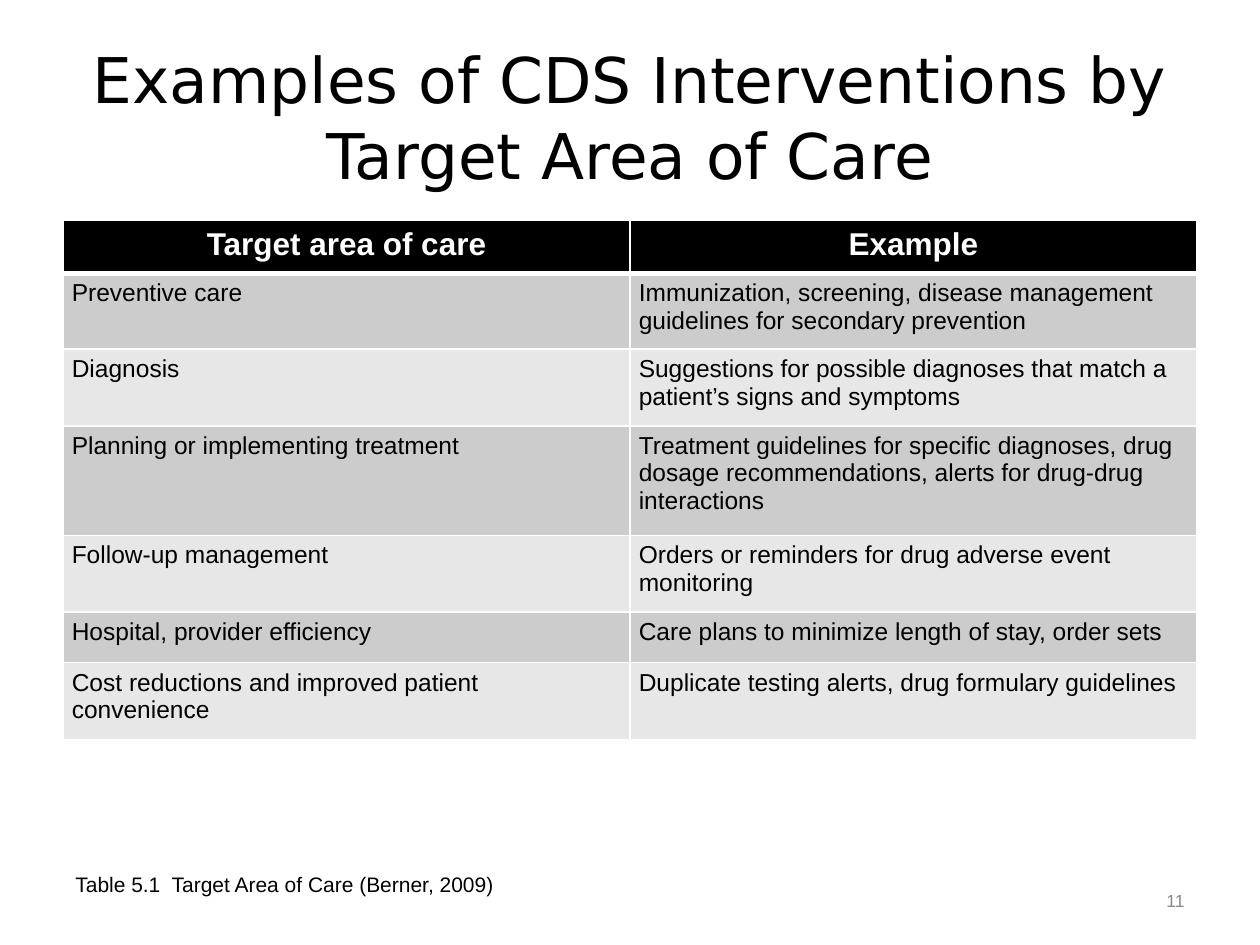
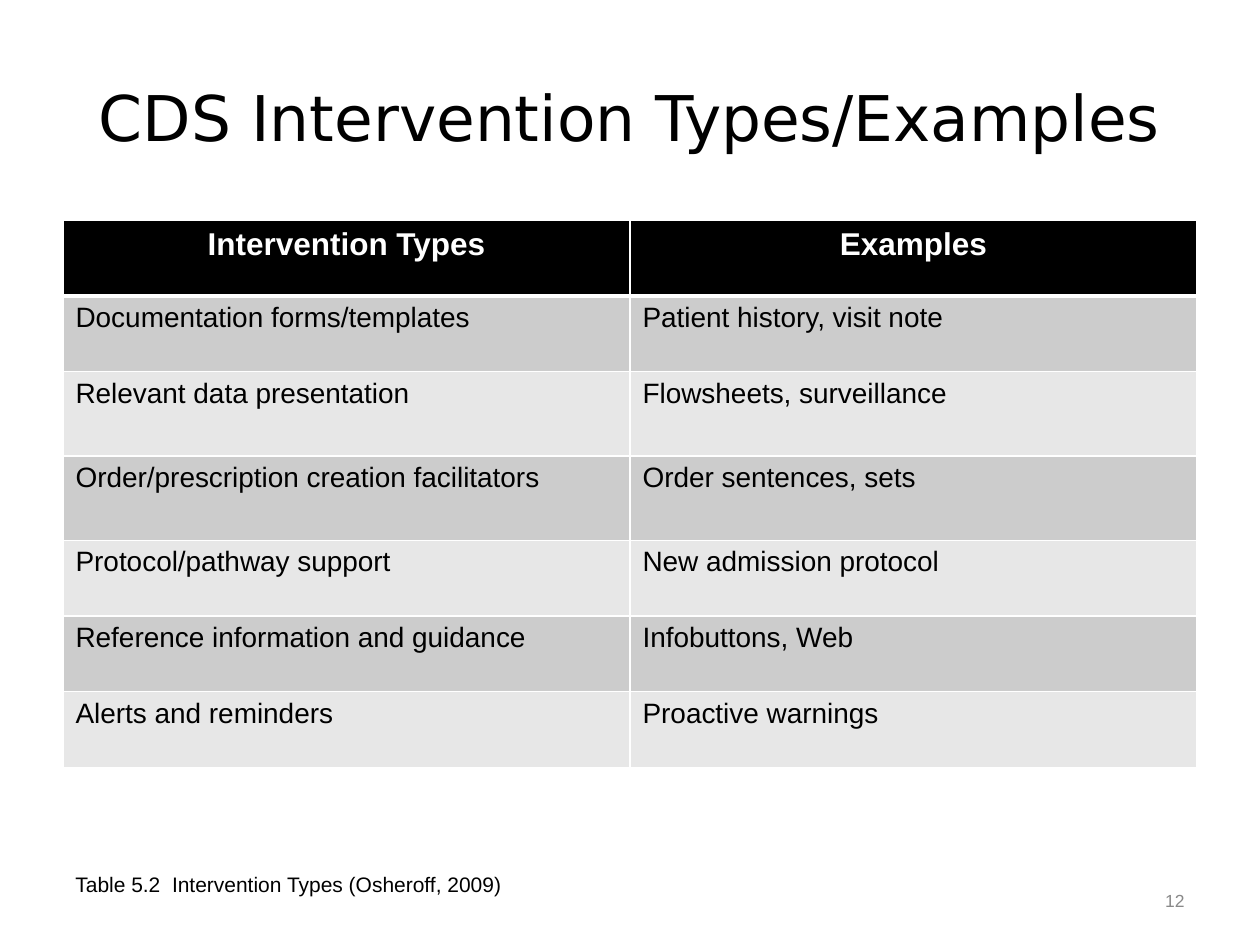
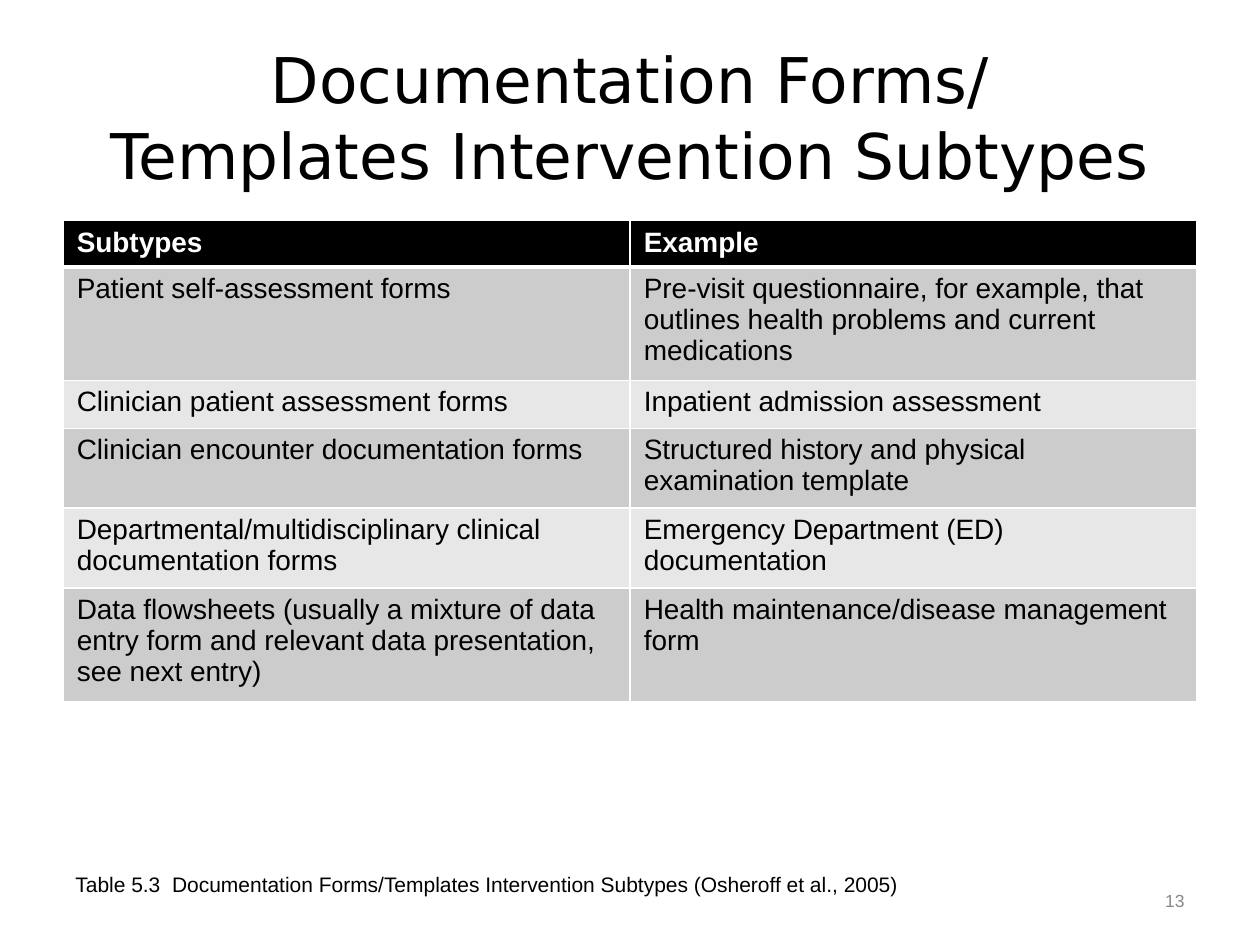
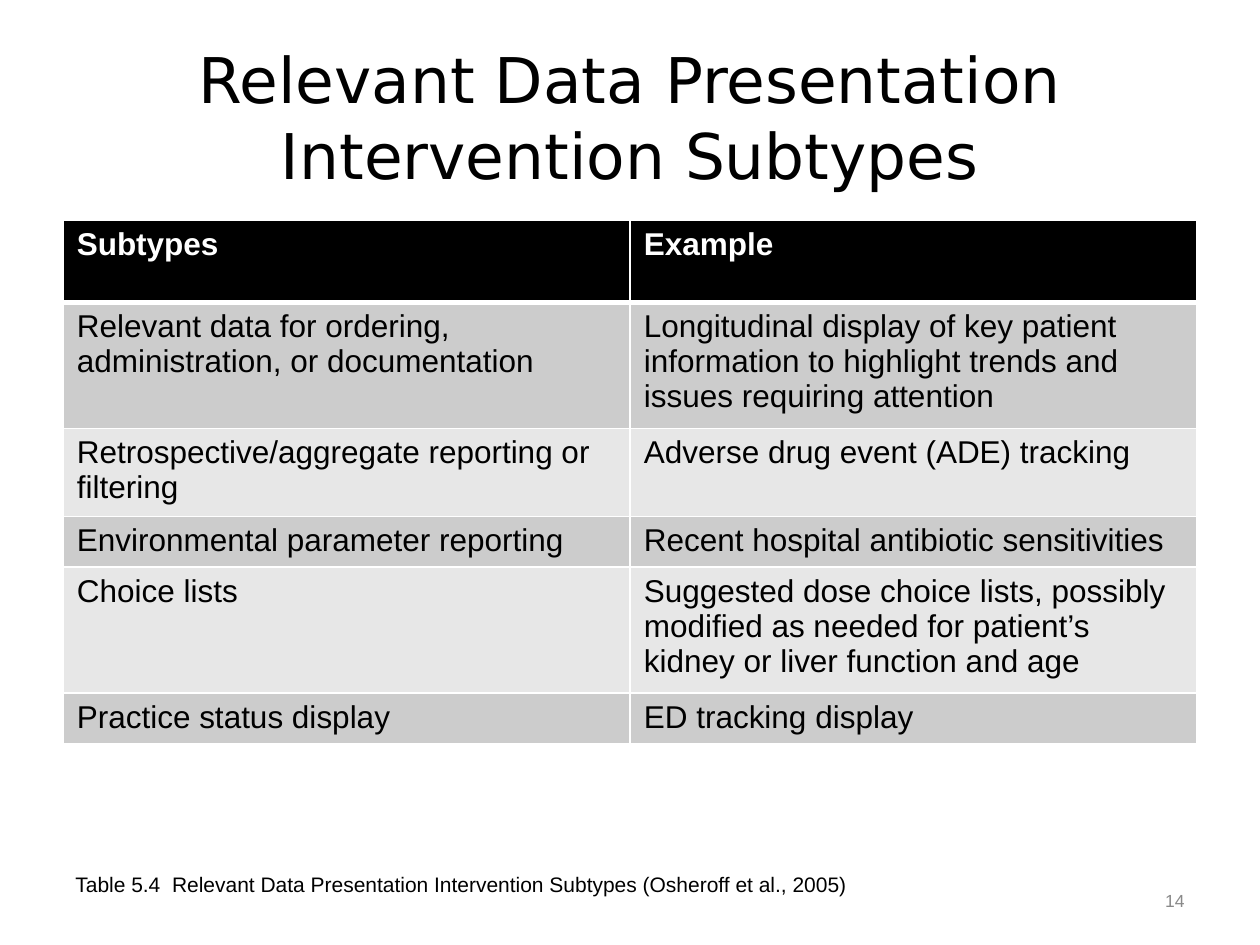
"""Build four slides of tables on clinical decision support interventions."""
from dataclasses import dataclass

from lxml.etree import SubElement
from pptx import Presentation
from pptx.dml.color import RGBColor
from pptx.enum.text import MSO_ANCHOR, PP_ALIGN
from pptx.oxml.ns import qn
from pptx.slide import Slide
from pptx.table import _Cell
from pptx.text.text import TextFrame
from pptx.util import Inches, Pt

BLACK = RGBColor(0x00, 0x00, 0x00)
WHITE = RGBColor(0xFF, 0xFF, 0xFF)
GRAY = RGBColor(0x89, 0x89, 0x89)
BANDS = (RGBColor(0xCC, 0xCC, 0xCC), RGBColor(0xE7, 0xE7, 0xE7))
HEAD_FONT = "DejaVu Sans"
BODY_FONT = "Arial"
LEFT, WIDTH = 0.5, 9
TABLE_TOP = 1.75
THIN, THICK = 1, 3
FIRST = 11


@dataclass(frozen=True)
class Style:
    """Hold the look of a piece of text."""
    size: int
    color: RGBColor = BLACK
    font: str = BODY_FONT
    bold: bool = False
    align: PP_ALIGN = PP_ALIGN.LEFT
    anchor: MSO_ANCHOR = MSO_ANCHOR.TOP


@dataclass(frozen=True)
class Box:
    """Hold a place on the slide in inches."""
    left: float
    top: float
    width: float
    height: float


@dataclass(frozen=True)
class Page:
    """Hold the content of one slide."""
    title: str
    note: str
    heights: tuple[float, ...]
    rows: tuple[tuple[str, str], ...]
    head: Style
    size: int
    inset: float
    head_inset: float


TITLE_BOX = Box(LEFT, 0.3, WIDTH, 1.25)
NOTE_BOX = Box(LEFT, 6.87, 8.35, 0.58)
NUM_BOX = Box(8.94, 6.85, 0.56, 0.6)
TITLE = Style(36, font=HEAD_FONT, align=PP_ALIGN.CENTER, anchor=MSO_ANCHOR.MIDDLE)
NOTE = Style(12)
NUM = Style(10, GRAY, align=PP_ALIGN.RIGHT, anchor=MSO_ANCHOR.MIDDLE)
HEAD_MID = Style(18, WHITE, bold=True, align=PP_ALIGN.CENTER)
HEAD_LEFT = Style(18, WHITE, bold=True)
HEAD_SMALL = Style(16, WHITE, bold=True)

PAGES = (
    Page(
        "Examples of CDS Interventions by Target Area of Care",
        "Table 5.1  Target Area of Care (Berner, 2009)",
        (0.42, 0.6, 0.61, 0.87, 0.61, 0.4, 0.61),
        (
            ("Target area of care", "Example"),
            ("Preventive care",
             "Immunization, screening, disease management guidelines for secondary prevention"),
            ("Diagnosis",
             "Suggestions for possible diagnoses that match a patient’s signs and symptoms"),
            ("Planning or implementing treatment",
             "Treatment guidelines for specific diagnoses, drug dosage recommendations, "
             "alerts for drug-drug interactions"),
            ("Follow-up management", "Orders or reminders for drug adverse event monitoring"),
            ("Hospital, provider efficiency", "Care plans to minimize length of stay, order sets"),
            ("Cost reductions and improved patient convenience",
             "Duplicate testing alerts, drug formulary guidelines"),
        ),
        HEAD_MID, 14, 0.07, 0.1,
    ),
    Page(
        "CDS Intervention Types/Examples",
        "Table 5.2  Intervention Types (Osheroff, 2009)",
        (0.6, 0.6, 0.67, 0.67, 0.6, 0.6, 0.6),
        (
            ("Intervention Types", "Examples"),
            ("Documentation forms/templates", "Patient history, visit note"),
            ("Relevant data presentation", "Flowsheets, surveillance"),
            ("Order/prescription creation facilitators", "Order sentences, sets"),
            ("Protocol/pathway support", "New admission protocol"),
            ("Reference information and guidance", "Infobuttons, Web"),
            ("Alerts and reminders", "Proactive warnings"),
        ),
        HEAD_MID, 16, 0.1, 0.1,
    ),
    Page(
        "Documentation Forms/\nTemplates Intervention Subtypes",
        "Table 5.3  Documentation Forms/Templates Intervention Subtypes (Osheroff et al., 2005)",
        (0.37, 0.9, 0.38, 0.63, 0.63, 0.9),
        (
            ("Subtypes", "Example"),
            ("Patient self-assessment forms",
             "Pre-visit questionnaire, for example, that outlines health problems "
             "and current medications"),
            ("Clinician patient assessment forms", "Inpatient admission assessment"),
            ("Clinician encounter documentation forms",
             "Structured history and physical examination template"),
            ("Departmental/multidisciplinary clinical documentation forms",
             "Emergency Department (ED) documentation"),
            ("Data flowsheets (usually a mixture of data entry form and relevant data "
             "presentation, see next entry)",
             "Health maintenance/disease management form"),
        ),
        HEAD_SMALL, 16, 0.11, 0.11,
    ),
    Page(
        "Relevant Data Presentation Intervention Subtypes",
        "Table 5.4  Relevant Data Presentation Intervention Subtypes (Osheroff et al., 2005)",
        (0.65, 1, 0.7, 0.4, 1, 0.4),
        (
            ("Subtypes", "Example"),
            ("Relevant data for ordering, administration, or documentation",
             "Longitudinal display of key patient information to highlight trends and "
             "issues requiring attention"),
            ("Retrospective/aggregate reporting or filtering", "Adverse drug event (ADE) tracking"),
            ("Environmental parameter reporting", "Recent hospital antibiotic sensitivities"),
            ("Choice lists",
             "Suggested dose choice lists, possibly modified as needed for patient’s "
             "kidney or liver function and age"),
            ("Practice status display", "ED tracking display"),
        ),
        HEAD_LEFT, 18, 0.11, 0.11,
    ),
)


def write(frame: TextFrame, text: str, style: Style) -> None:
    """Write text into a frame, with a line break at each newline."""
    frame.word_wrap = True
    para = frame.paragraphs[0]
    para.alignment = style.align
    for index, line in enumerate(text.split("\n")):
        if index:
            para.add_line_break()
        run = para.add_run()
        run.text = line
        font = run.font
        font.name, font.size, font.bold = style.font, Pt(style.size), style.bold
        font.color.rgb = style.color


def add_text(slide: Slide, box: Box, text: str, style: Style) -> None:
    """Add a text box in one style."""
    frame = slide.shapes.add_textbox(
        Inches(box.left), Inches(box.top), Inches(box.width), Inches(box.height)
    ).text_frame
    frame.vertical_anchor = style.anchor
    write(frame, text, style)


def add_edges(cell: _Cell, top: int, bottom: int) -> None:
    """Draw white borders around a cell."""
    props = cell._tc.get_or_add_tcPr()
    for tag, width in (("lnL", THIN), ("lnR", THIN), ("lnT", top), ("lnB", bottom)):
        edge = SubElement(props, qn(f"a:{tag}"), w=str(Pt(width)))
        fill = SubElement(edge, qn("a:solidFill"))
        SubElement(fill, qn("a:srgbClr"), val=str(WHITE))


def add_grid(slide: Slide, page: Page) -> None:
    """Add the banded table of a page."""
    count = len(page.rows[0])
    table = slide.shapes.add_table(
        len(page.rows), count, Inches(LEFT), Inches(TABLE_TOP),
        Inches(WIDTH), Inches(sum(page.heights))
    ).table
    table.horz_banding = False
    for col in table.columns:
        col.width = Inches(WIDTH / count)
    for row, (height, texts) in enumerate(zip(page.heights, page.rows)):
        table.rows[row].height = Inches(height)
        is_head = row == 0
        style = page.head if is_head else Style(page.size)
        inset = page.head_inset if is_head else page.inset
        for col, text in enumerate(texts):
            cell = table.cell(row, col)
            cell.margin_left = cell.margin_right = Inches(inset)
            add_edges(cell, THICK if row == 1 else THIN, THICK if is_head else THIN)
            cell.fill.solid()
            cell.fill.fore_color.rgb = BLACK if is_head else BANDS[(row - 1) % 2]
            write(cell.text_frame, text, style)


def main() -> None:
    """Build and save the deck."""
    deck = Presentation()
    deck.slide_width, deck.slide_height = Inches(10), Inches(7.5)
    for number, page in enumerate(PAGES, FIRST):
        slide = deck.slides.add_slide(deck.slide_layouts[6])
        add_text(slide, TITLE_BOX, page.title, TITLE)
        add_grid(slide, page)
        add_text(slide, NOTE_BOX, page.note, NOTE)
        add_text(slide, NUM_BOX, str(number), NUM)
    deck.save("out.pptx")


if __name__ == "__main__":
    main()
